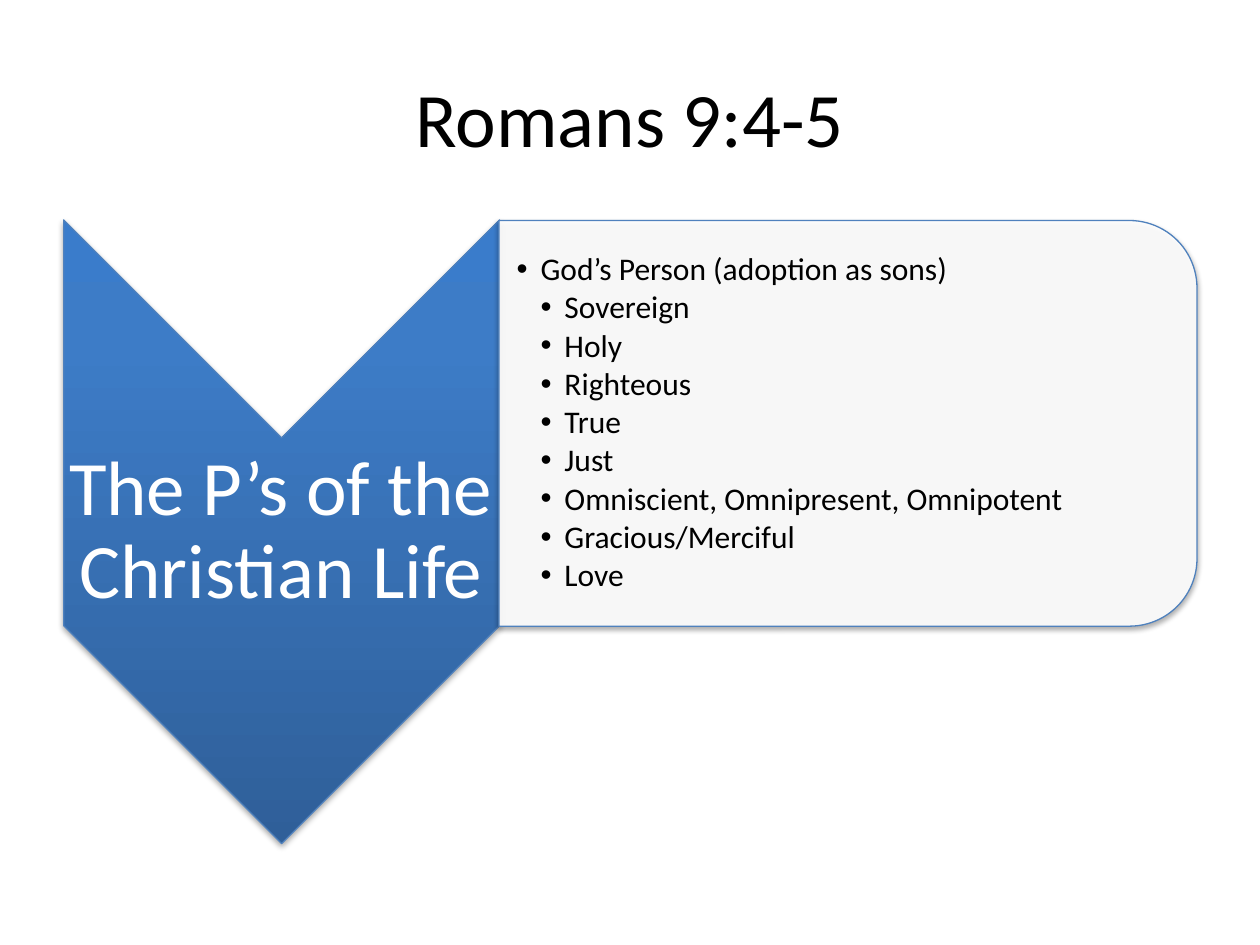
"""Build the Romans 9:4-5 slide with a chevron label and a list panel."""
from lxml import etree
from pptx import Presentation
from pptx import util as u
from pptx.dml.color import RGBColor
from pptx.enum import shapes, text
from pptx.oxml import ns

TITLE = "Romans 9:4-5"
LABEL = "The P’s of the Christian Life"
ITEMS = [
    (1, "God’s Person (adoption as sons)"),
    (2, "Sovereign"),
    (2, "Holy"),
    (2, "Righteous"),
    (2, "True"),
    (2, "Just"),
    (2, "Omniscient, Omnipresent, Omnipotent"),
    (2, "Gracious/Merciful"),
    (2, "Love"),
]
GRADIENT = [(0, "2F5F99"), (80, "3D7CC7"), (100, "3A7CCB")]
OUTLINE = "4F81BD"
INDENT = 0.19


def color(value):
    return RGBColor.from_string(value)


def add(parent, tag, **attributes):
    return etree.SubElement(parent, ns.qn(tag), attributes)


def place(shape, left, top, width, height):
    shape.left, shape.top = u.Inches(left), u.Inches(top)
    shape.width, shape.height = u.Inches(width), u.Inches(height)


def add_turned_shape(slide, kind, left, top, width, height):
    shape = slide.shapes.add_shape(kind, 0, 0, 0, 0)
    place(shape, left, top, width, height)
    shape.rotation = 90
    shape.fill.solid()
    shape.fill.fore_color.rgb = color("FFFFFF")
    shape.line.color.rgb = color(OUTLINE)
    shape.line.width = u.Pt(0.75)
    effects = add(shape.element.spPr, "a:effectLst")
    shadow = add(effects, "a:outerShdw", blurRad=str(u.Pt(3.1)), dist=str(u.Pt(1.8)),
                 dir="5400000", rotWithShape="0")
    black = add(shadow, "a:srgbClr", val="000000")
    add(black, "a:alpha", val="35000")
    return shape


def fill_gradient(shape, stops):
    solid = shape.element.spPr.find(ns.qn("a:solidFill"))
    gradient = etree.Element(ns.qn("a:gradFill"), rotWithShape="0")
    stop_list = add(gradient, "a:gsLst")
    for percent, value in stops:
        stop = add(stop_list, "a:gs", pos=str(percent * 1000))
        add(stop, "a:srgbClr", val=value)
    add(gradient, "a:lin", ang="16200000", scaled="0")
    solid.getparent().replace(solid, gradient)


def set_frame(frame, left_inset, inset):
    frame.word_wrap = True
    frame.auto_size = text.MSO_AUTO_SIZE.NONE
    frame.vertical_anchor = text.MSO_ANCHOR.MIDDLE
    frame.margin_left = u.Inches(left_inset)
    frame.margin_top = frame.margin_right = frame.margin_bottom = u.Inches(inset)


def format_paragraph(paragraph, size, value, alignment):
    paragraph.alignment = alignment
    for run in paragraph.runs:
        run.font.name = "Calibri"
        run.font.size = u.Pt(size)
        run.font.color.rgb = color(value)


def add_label(slide):
    label = slide.shapes.add_textbox(0, 0, 0, 0)
    place(label, 0.5, 3.48, 3.46, 1.48)
    set_frame(label.text_frame, 0.03, 0.03)
    paragraph = label.text_frame.paragraphs[0]
    paragraph.text = LABEL
    paragraph.line_spacing = 0.9
    format_paragraph(paragraph, 44, "FFFFFF", text.PP_ALIGN.CENTER)


def fill_list(body):
    place(body, 3.96, 1.91, 5.38, 2.9)
    frame = body.text_frame
    set_frame(frame, 0.14, 0.01)
    frame.text = "\n".join(item for _, item in ITEMS)
    for paragraph, (level, _) in zip(frame.paragraphs, ITEMS):
        paragraph.level = level
        paragraph.line_spacing = 0.9
        paragraph.space_before = u.Pt(0)
        paragraph.space_after = u.Pt(2.4)
        format_paragraph(paragraph, 18, "000000", text.PP_ALIGN.LEFT)
        properties = paragraph._p.get_or_add_pPr()
        properties.set("marL", str(u.Inches(INDENT * level)))
        properties.set("indent", str(u.Inches(-INDENT)))
        add(properties, "a:buChar", char="•")


def main():
    presentation = Presentation()
    presentation.slide_width, presentation.slide_height = u.Inches(10), u.Inches(7.5)
    slide = presentation.slides.add_slide(presentation.slide_layouts[1])
    title, body = slide.placeholders
    place(title, 0.5, 0.3, 9, 1.25)
    title.text_frame.text = TITLE
    format_paragraph(title.text_frame.paragraphs[0], 44, "000000", text.PP_ALIGN.CENTER)

    kinds = shapes.MSO_SHAPE
    chevron = add_turned_shape(slide, kinds.CHEVRON, -0.24, 2.49, 4.95, 3.46)
    fill_gradient(chevron, GRADIENT)
    add_label(slide)
    panel = add_turned_shape(slide, kinds.ROUND_2_SAME_RECTANGLE, 5.12, 0.59, 3.22, 5.54)
    panel_color = panel.element.spPr.find(ns.qn("a:solidFill"))[0]
    add(panel_color, "a:alpha", val="90000")
    fill_list(body)
    panel.element.addnext(body.element)
    presentation.save("out.pptx")


if __name__ == "__main__":
    main()
